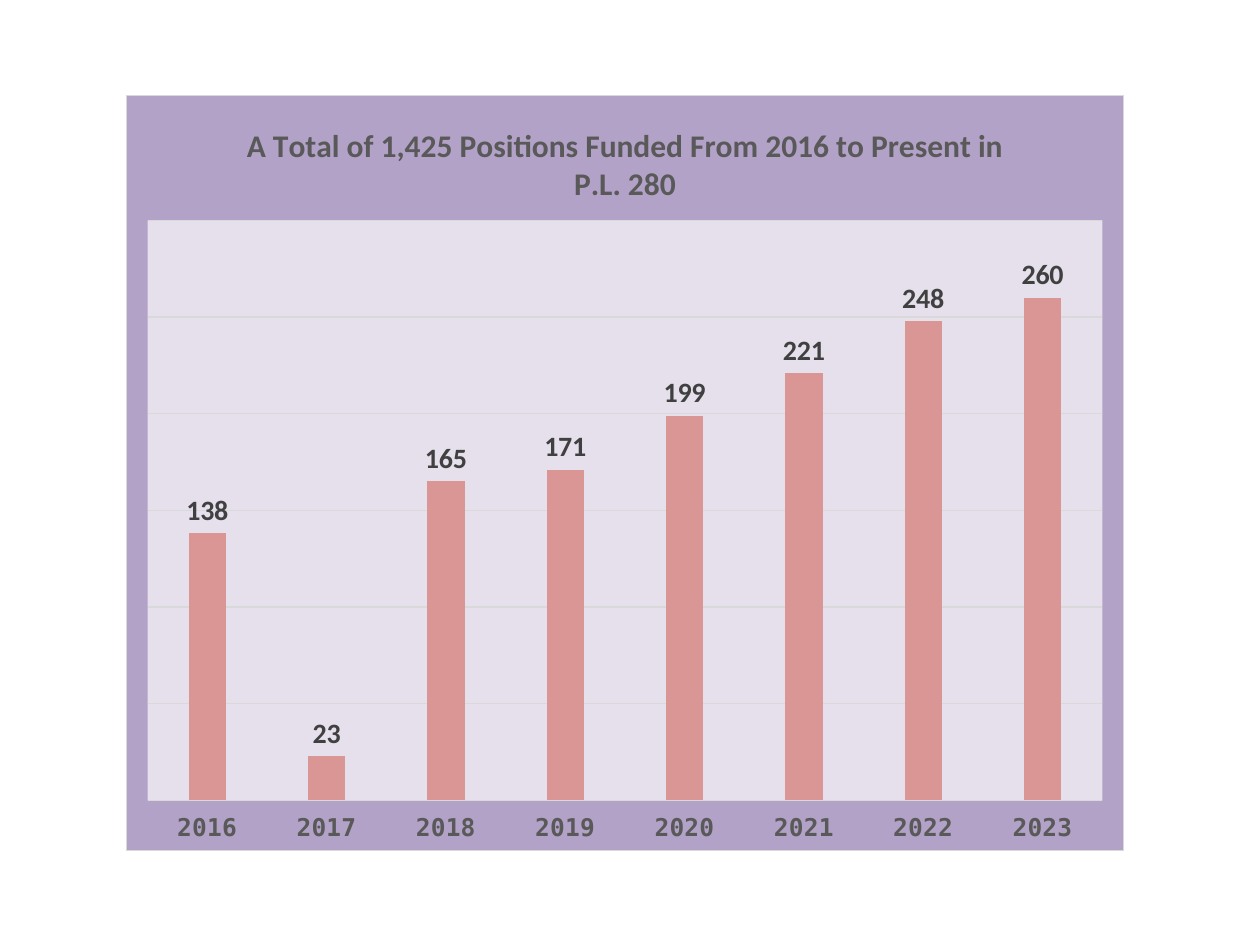
from lxml.etree import SubElement
from pptx import Presentation
from pptx.chart.data import CategoryChartData
from pptx.dml.color import RGBColor
from pptx.enum.chart import XL_CHART_TYPE, XL_LABEL_POSITION, XL_TICK_LABEL_POSITION, XL_TICK_MARK
from pptx.oxml import parse_xml
from pptx.oxml.ns import nsdecls, qn
from pptx.util import Pt

PX = 914400 // 126
COLORS = {
    "frame": "B3A2C7",
    "plot": "E6E0EC",
    "bar": "D99694",
    "rule": "D9D9D9",
    "text": "595959",
    "label": "404040",
    "base": "000000",
}
POSITIONS = {
    "2016": 138, "2017": 23, "2018": 165, "2019": 171,
    "2020": 199, "2021": 221, "2022": 248, "2023": 260,
}
CHART_BOX = (126, 95, 998, 756)
PLOT_BOX = (147, 220, 956, 581)


def style_font(font, name, size, color, bold=True):
    values = {"name": name, "size": Pt(size), "bold": bold}
    for attribute, value in values.items():
        setattr(font, attribute, value)
    font.color.rgb = RGBColor.from_string(COLORS[color])


def area_format(fill, line=None):
    """Return a c:spPr element for the chart area or the plot area."""
    outline = "<a:ln><a:noFill/></a:ln>"
    if line:
        outline = (f'<a:ln w="{Pt(0.75)}"><a:solidFill>'
                   f'<a:srgbClr val="{COLORS[line]}"/></a:solidFill></a:ln>')
    return parse_xml(
        f'<c:spPr {nsdecls("c", "a")}><a:solidFill><a:srgbClr val="{COLORS[fill]}"/>'
        f'</a:solidFill>{outline}</c:spPr>')


presentation = Presentation()
presentation.slide_width = 1260 * PX
presentation.slide_height = 945 * PX
slide = presentation.slides.add_slide(presentation.slide_layouts[6])

chart_data = CategoryChartData()
chart_data.categories = list(POSITIONS)
chart_data.add_series("Series 1", list(POSITIONS.values()))
chart = slide.shapes.add_chart(
    XL_CHART_TYPE.COLUMN_CLUSTERED, *(length * PX for length in CHART_BOX), chart_data
).chart
chart.has_legend = False
style_font(chart.font, "Calibri", 10, "base", bold=False)

# Title
chart.has_title = True
chart.chart_title.include_in_layout = False
paragraph = chart.chart_title.text_frame.paragraphs[0]
run = paragraph.add_run()
run.text = "A Total of 1,425 Positions Funded From 2016 to Present in P.L. 280"
style_font(run.font, "Calibri", 18, "text")

# Axes
year_axis = chart.category_axis
year_axis.major_tick_mark = XL_TICK_MARK.NONE
year_axis.tick_label_position = XL_TICK_LABEL_POSITION.LOW
style_font(year_axis.tick_labels.font, "DejaVu Sans Mono", 14, "text")
value_axis = chart.value_axis
axis_values = {
    "minimum_scale": 0,
    "maximum_scale": 300,
    "major_unit": 50,
    "has_major_gridlines": True,
    "visible": False,
}
for attribute, value in axis_values.items():
    setattr(value_axis, attribute, value)
for line in (year_axis.format.line, value_axis.major_gridlines.format.line):
    line.width = Pt(0.75)
    line.color.rgb = RGBColor.from_string(COLORS["rule"])

# Columns and their labels
plot = chart.plots[0]
plot.gap_width = 219
plot.overlap = -27
plot.vary_by_categories = False
series = plot.series[0]
series.format.fill.solid()
series.format.fill.fore_color.rgb = RGBColor.from_string(COLORS["bar"])
labels = series.data_labels
labels.show_value = True
labels.position = XL_LABEL_POSITION.OUTSIDE_END
style_font(labels.font, "Calibri", 16, "label")

# Backgrounds of the chart and plot areas
chart_element = chart.element.find(qn("c:chart"))
chart_element.addnext(area_format("frame", "rule"))
plot_area = chart_element.find(qn("c:plotArea"))
plot_area.append(area_format("plot"))

# Plot position as fractions of the chart
for old_layout in plot_area.findall(qn("c:layout")):
    plot_area.remove(old_layout)
layout = parse_xml(f'<c:layout {nsdecls("c")}><c:manualLayout/></c:layout>')
plot_area.insert(0, layout)
left, top, width, height = CHART_BOX
plot_left, plot_top, plot_width, plot_height = PLOT_BOX
layout_values = {
    "layoutTarget": "inner",
    "xMode": "edge",
    "yMode": "edge",
    "x": (plot_left - left) / width,
    "y": (plot_top - top) / height,
    "w": plot_width / width,
    "h": plot_height / height,
}
for tag, value in layout_values.items():
    SubElement(layout[0], qn(f"c:{tag}")).set("val", str(value))

presentation.save("out.pptx")
